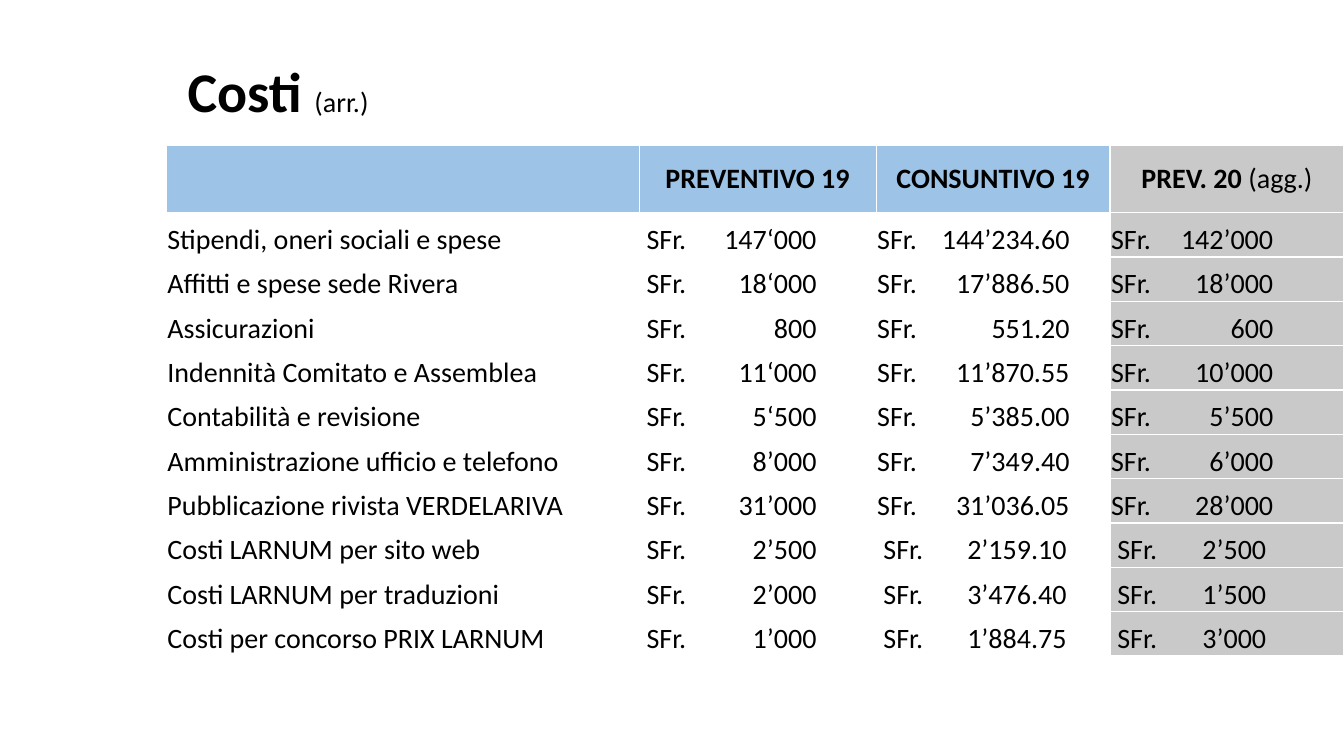
"""Build the slide with the table of costs: budget 19, actual 19 and budget 20."""
import pptx
import pptx.util
import pptx.dml.color
import pptx.enum.text
import pptx.oxml
import pptx.oxml.ns

Inches = pptx.util.Inches
ANCHOR = pptx.enum.text.MSO_ANCHOR
ALIGN = pptx.enum.text.PP_ALIGN
THEME = {
    "font": "Calibri", "text": "000000", "header": "9DC3E6", "forecast": "C9C9C9",
    "border": "FFFFFF", "title_size": 40, "body_size": 20,
}
COLUMN_WIDTHS = [4.69, 2.35, 2.32, 2.32]
AMOUNT_EDGES = [1.75, 1.91, 1.61]
INDENTED_EDGES = [1.75, 1.88, 1.54]
HEADER_HEIGHT, ROW_HEIGHT = 0.67, 0.44
HEADINGS = [
    [("PREVENTIVO 19", True)],
    [("CONSUNTIVO 19", True)],
    [("PREV. 20 ", True), ("(agg.)", False)],
]
COSTS = [
    ("Stipendi, oneri sociali e spese", "147‘000", "144’234.60", "142’000"),
    ("Affitti e spese sede Rivera", "18‘000", "17’886.50", "18’000"),
    ("Assicurazioni", "800", "551.20", "600"),
    ("Indennità Comitato e Assemblea", "11‘000", "11’870.55", "10’000"),
    ("Contabilità e revisione", "5‘500", "5’385.00", "5’500"),
    ("Amministrazione ufficio e telefono", "8’000", "7’349.40", "6’000"),
    ("Pubblicazione rivista VERDELARIVA", "31’000", "31’036.05", "28’000"),
    ("Costi LARNUM per sito web", "2’500", "2’159.10", "2’500"),
    ("Costi LARNUM per traduzioni", "2’000", "3’476.40", "1’500"),
    ("Costi per concorso PRIX LARNUM", "1’000", "1’884.75", "3’000"),
]
FIRST_INDENTED_ROW = 8


def add_run(paragraph, text, size, bold=False):
    run = paragraph.add_run()
    run.text = text
    run.font.name = THEME["font"]
    run.font.size = pptx.util.Pt(size)
    run.font.bold = bold
    run.font.color.rgb = pptx.dml.color.RGBColor.from_string(THEME["text"])


def format_cell(cell, fill, anchor):
    properties = cell._tc.get_or_add_tcPr()
    for side in ("lnL", "lnR", "lnT", "lnB"):
        properties.append(pptx.oxml.parse_xml(
            f'<a:{side} {pptx.oxml.ns.nsdecls("a")} w="12700"><a:solidFill>'
            f'<a:srgbClr val="{THEME["border"]}"/></a:solidFill></a:{side}>'))
    if fill:
        cell.fill.solid()
        cell.fill.fore_color.rgb = pptx.dml.color.RGBColor.from_string(fill)
    else:
        cell.fill.background()
    cell.vertical_anchor = anchor
    cell.margin_left = cell.margin_right = cell.margin_top = Inches(0.01)
    cell.margin_bottom = 0


presentation = pptx.Presentation()
presentation.slide_width, presentation.slide_height = Inches(13.33), Inches(7.5)
slide = presentation.slides.add_slide(presentation.slide_layouts[5])

heading = slide.shapes.title
heading.left, heading.top = Inches(1.76), Inches(0.51)
heading.width, heading.height = Inches(10.25), Inches(0.77)
heading.text_frame.auto_size = pptx.enum.text.MSO_AUTO_SIZE.SHAPE_TO_FIT_TEXT
heading_line = heading.text_frame.paragraphs[0]
heading_line.alignment = ALIGN.LEFT
add_run(heading_line, "Costi ", THEME["title_size"], True)
add_run(heading_line, "(arr.)", THEME["body_size"])

costs = slide.shapes.add_table(
    len(COSTS) + 1, len(COLUMN_WIDTHS), Inches(1.65), Inches(1.44),
    Inches(sum(COLUMN_WIDTHS)), Inches(HEADER_HEIGHT + ROW_HEIGHT * len(COSTS))).table
costs.first_row = costs.horz_banding = False
for column, width in zip(costs.columns, COLUMN_WIDTHS):
    column.width = Inches(width)
for row_number, row in enumerate(costs.rows):
    row.height = Inches(ROW_HEIGHT if row_number else HEADER_HEIGHT)

forecast_column = len(COLUMN_WIDTHS) - 1
for column_number in range(len(COLUMN_WIDTHS)):
    fill = THEME["forecast"] if column_number == forecast_column else THEME["header"]
    cell = costs.cell(0, column_number)
    format_cell(cell, fill, ANCHOR.MIDDLE)
    if column_number:
        line = cell.text_frame.paragraphs[0]
        line.alignment = ALIGN.CENTER
        for text, bold in HEADINGS[column_number - 1]:
            add_run(line, text, THEME["body_size"], bold)

for row_number, (label, *amounts) in enumerate(COSTS, 1):
    label_cell = costs.cell(row_number, 0)
    format_cell(label_cell, None, ANCHOR.BOTTOM)
    add_run(label_cell.text_frame.paragraphs[0], label, THEME["body_size"])
    indented_row = row_number >= FIRST_INDENTED_ROW
    edges = INDENTED_EDGES if indented_row else AMOUNT_EDGES
    for column_number, (amount, edge) in enumerate(zip(amounts, edges), 1):
        cell = costs.cell(row_number, column_number)
        fill = THEME["forecast"] if column_number == forecast_column else None
        format_cell(cell, fill, ANCHOR.BOTTOM)
        line = cell.text_frame.paragraphs[0]
        line._p.get_or_add_pPr().append(pptx.oxml.parse_xml(
            f'<a:tabLst {pptx.oxml.ns.nsdecls("a")}>'
            f'<a:tab pos="{Inches(edge)}" algn="r"/></a:tabLst>'))
        currency = " SFr." if column_number == 1 or indented_row else "SFr."
        add_run(line, f"{currency}\t{amount}", THEME["body_size"])

presentation.save("out.pptx")
